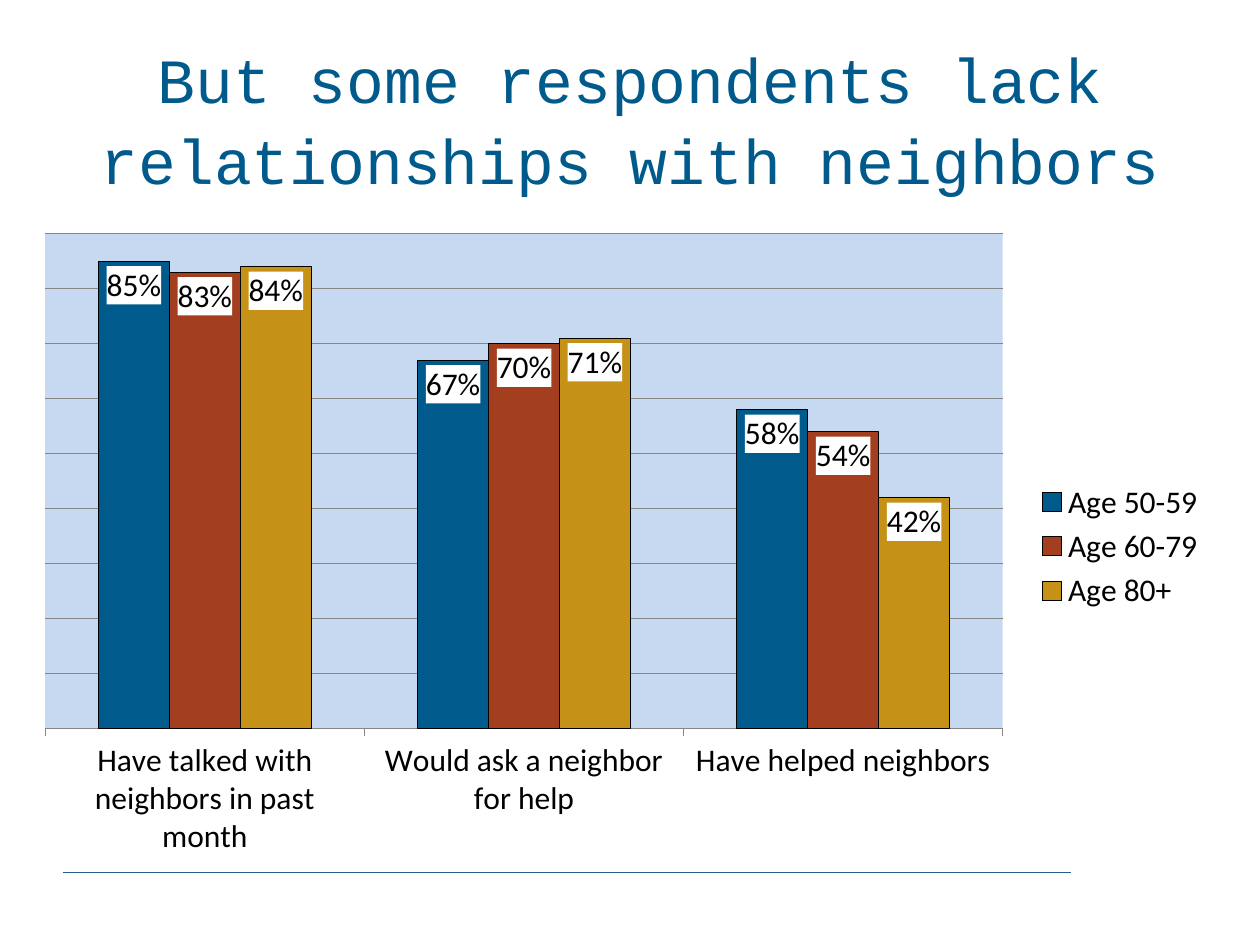
from lxml.etree import SubElement
from pptx import Presentation
from pptx.chart.data import CategoryChartData
from pptx.dml.color import RGBColor
from pptx.enum.chart import (XL_CHART_TYPE, XL_LABEL_POSITION, XL_LEGEND_POSITION,
                             XL_TICK_LABEL_POSITION, XL_TICK_MARK)
from pptx.enum.shapes import MSO_CONNECTOR
from pptx.enum.text import MSO_ANCHOR, PP_ALIGN
from pptx.oxml import parse_xml
from pptx.oxml.ns import nsdecls, qn
from pptx.util import Cm, Pt

BLUE = RGBColor(0x00, 0x5A, 0x8B)
RUST = RGBColor(0xA3, 0x3F, 0x1F)
GOLD = RGBColor(0xC5, 0x92, 0x17)
PLOT_FILL = RGBColor(0xC6, 0xD9, 0xF1)
RULE_BLUE = RGBColor(0x2D, 0x58, 0x8D)
GRID_GRAY = RGBColor(0x86, 0x86, 0x86)
BLACK = RGBColor(0, 0, 0)
WHITE = RGBColor(0xFF, 0xFF, 0xFF)

CATEGORIES = ["Have talked with neighbors in past month",
              "Would ask a neighbor for help", "Have helped neighbors"]
AGE_GROUPS = [("Age 50-59", (0.85, 0.67, 0.58), BLUE),
              ("Age 60-79", (0.83, 0.70, 0.54), RUST),
              ("Age 80+", (0.84, 0.71, 0.42), GOLD)]


def set_font(font, name, size, color):
    font.name, font.size = name, Pt(size)
    font.color.rgb = color


def add_text(slide, box, text, *, font, size, color, align, anchor, line_spacing):
    frame = slide.shapes.add_textbox(*box).text_frame
    frame.word_wrap = True
    frame.vertical_anchor = anchor
    paragraph = frame.paragraphs[0]
    paragraph.text = text
    paragraph.alignment = align
    paragraph.line_spacing = line_spacing
    set_font(paragraph.runs[0].font, font, size, color)


def add_footer_rule(slide, left, top, width):
    rule = slide.shapes.add_connector(MSO_CONNECTOR.STRAIGHT, left, top, left + width, top)
    rule.line.color.rgb = RULE_BLUE
    rule.line.width = Pt(0.5)
    SubElement(rule._element.spPr, qn("a:effectLst"))


def format_plot_area(chart, x, y, width, height):
    """Place the inner plot area by fractions of the chart and fill it."""
    plot_area = chart._chartSpace.chart.plotArea
    for layout in plot_area.findall(qn("c:layout")):
        plot_area.remove(layout)
    plot_area.insert(0, parse_xml(
        f'<c:layout {nsdecls("c")}><c:manualLayout><c:layoutTarget val="inner"/>'
        '<c:xMode val="edge"/><c:yMode val="edge"/>'
        f'<c:x val="{x}"/><c:y val="{y}"/><c:w val="{width}"/><c:h val="{height}"/>'
        '</c:manualLayout></c:layout>'))
    plot_area.append(parse_xml(
        f'<c:spPr {nsdecls("c", "a")}><a:solidFill><a:srgbClr val="{PLOT_FILL}"/>'
        '</a:solidFill><a:ln><a:noFill/></a:ln></c:spPr>'))


def format_axes(chart):
    category_axis, value_axis = chart.category_axis, chart.value_axis
    category_axis.major_tick_mark = XL_TICK_MARK.OUTSIDE
    category_axis.format.line.color.rgb = GRID_GRAY
    value_axis.minimum_scale, value_axis.maximum_scale = 0, 0.9
    value_axis.major_unit = 0.1
    value_axis.has_major_gridlines = True
    value_axis.major_gridlines.format.line.color.rgb = GRID_GRAY
    value_axis.major_tick_mark = XL_TICK_MARK.NONE
    value_axis.tick_label_position = XL_TICK_LABEL_POSITION.NONE
    value_axis.visible = False


def format_series(series, color):
    series.format.fill.solid()
    series.format.fill.fore_color.rgb = color
    series.format.line.color.rgb = BLACK
    series.format.line.width = Pt(0.75)
    labels = series.data_labels
    labels.show_value = True
    labels.number_format, labels.number_format_is_linked = "0%", False
    labels.position = XL_LABEL_POSITION.INSIDE_END
    set_font(labels.font, "Calibri", 18, BLACK)
    # White box behind each label
    labels._element.find(qn("c:txPr")).addprevious(parse_xml(
        f'<c:spPr {nsdecls("c", "a")}><a:solidFill><a:srgbClr val="{WHITE}"/>'
        '</a:solidFill></c:spPr>'))


def add_neighbor_chart(slide, box):
    data = CategoryChartData(number_format="0%")
    data.categories = CATEGORIES
    for name, values, _ in AGE_GROUPS:
        data.add_series(name, values)
    chart = slide.shapes.add_chart(XL_CHART_TYPE.COLUMN_CLUSTERED, *box, data).chart
    set_font(chart.font, "Calibri", 18, BLACK)
    chart.has_title = False
    chart.has_legend = True
    chart.legend.position = XL_LEGEND_POSITION.RIGHT
    chart.legend.include_in_layout = False
    plot = chart.plots[0]
    plot.gap_width, plot.overlap = 150, 0
    plot.vary_by_categories = False
    for series, (_, _, color) in zip(plot.series, AGE_GROUPS):
        format_series(series, color)
    format_axes(chart)
    format_plot_area(chart, 0.02, 0.02, 0.8, 0.76)


def main():
    presentation = Presentation()
    presentation.slide_width, presentation.slide_height = Cm(25.4), Cm(19.05)
    slide = presentation.slides.add_slide(presentation.slide_layouts[6])
    # Rule, title, chart
    add_footer_rule(slide, Cm(1.27), Cm(17.58), Cm(20.32))
    add_text(slide, (Cm(1.27), Cm(0.76), Cm(22.86), Cm(3.18)),
             "But some respondents lack relationships with neighbors",
             font="Courier New", size=36, color=BLUE, align=PP_ALIGN.CENTER,
             anchor=MSO_ANCHOR.MIDDLE, line_spacing=1.07)
    add_neighbor_chart(slide, (Cm(0.43), Cm(4.45), Cm(24.13), Cm(13.13)))
    presentation.save("out.pptx")


if __name__ == "__main__":
    main()
